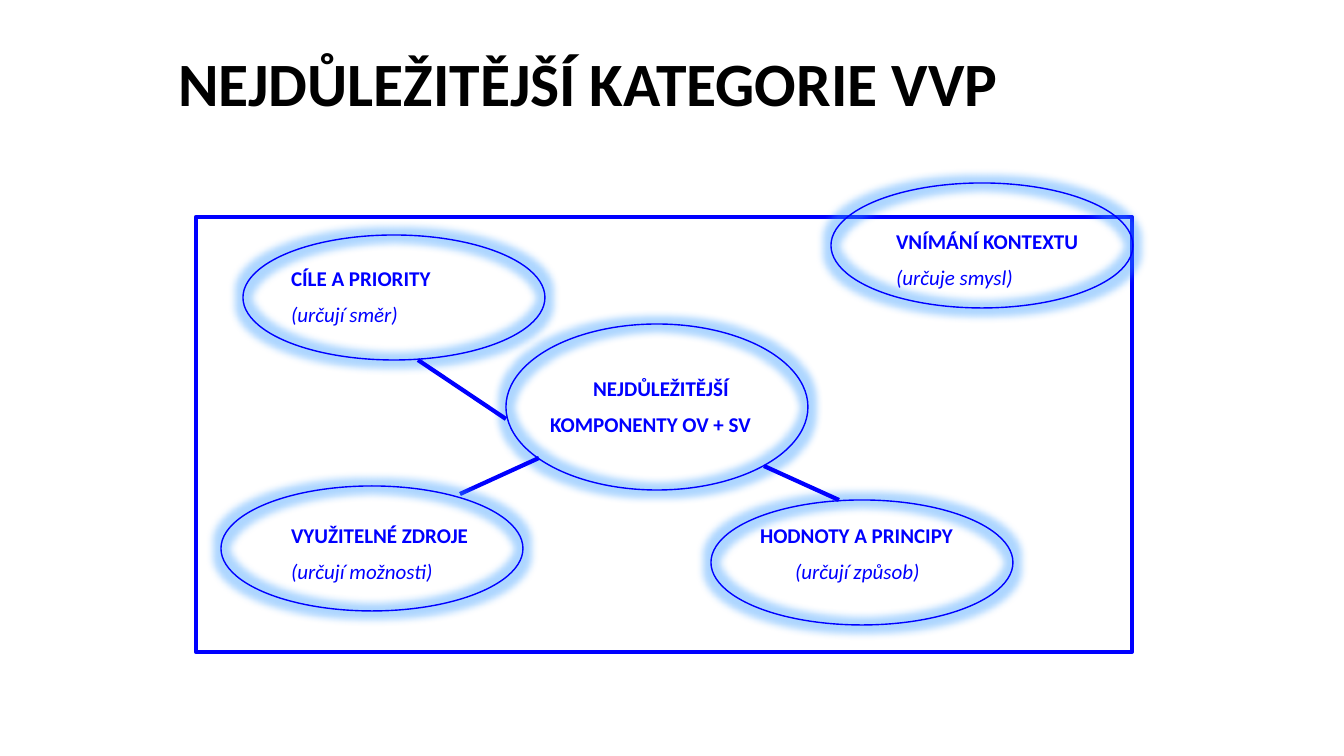
"""Build the slide on the key categories of VVP as a framed diagram of glowing ovals."""
from lxml import etree
from pptx import Presentation
from pptx import util as u
from pptx.dml.color import RGBColor
from pptx.enum import shapes, text
from pptx.oxml.ns import qn

BLUE = RGBColor(0x00, 0x00, 0xFF)
BLACK = RGBColor(0x00, 0x00, 0x00)
GLOW = RGBColor(0x33, 0x99, 0xFF)
FONT = "Calibri"
EMU_PER_PX = 914400 / 100.8
OVAL_INSET = 0.146
OVAL_W, OVAL_H, CENTRE_H = 302, 125, 166
GLOW_RADIUS = 15

TITLE = "NEJDŮLEŽITĚJŠÍ KATEGORIE VVP"
TITLE_BOX = (168, 39, 1008, 95)
FRAME = (196, 217, 936, 435)

# left, top, height, top of text, lines of (text, left, italic)
CENTRE = (506, 324, CENTRE_H, 378,
          [("NEJDŮLEŽITĚJŠÍ", 593, False), ("KOMPONENTY OV + SV", 550, False)])
GOALS = (243, 235, OVAL_H, 268,
         [("CÍLE A PRIORITY", 291, False), ("(určují směr)", 291, True)])
VALUES = (711, 500, OVAL_H, 525,
          [("HODNOTY A PRINCIPY", 760, False), ("(určují způsob)", 795, True)])
CONTEXT = (831, 183, OVAL_H, 231,
           [("VNÍMÁNÍ KONTEXTU", 896, False), ("(určuje smysl)", 896, True)])
RESOURCES = (221, 486, OVAL_H, 525,
             [("VYUŽITELNÉ ZDROJE", 291, False), ("(určují možnosti)", 291, True)])
LINKS = [(460, 494, 539, 458), (506, 419, 418, 360), (764, 466, 839, 500)]


def px(n):
    return u.Emu(round(n * EMU_PER_PX))


def style_run(r, size, color, bold, italic=False):
    r.font.name, r.font.size = FONT, u.Pt(size)
    r.font.color.rgb = color
    r.font.bold, r.font.italic = bold, italic


def add_outline(s, kind, box, width):
    sp = s.shapes.add_shape(kind, *map(px, box))
    sp.shadow.inherit = False
    sp.fill.background()
    sp.line.color.rgb, sp.line.width = BLUE, u.Pt(width)
    return sp


def add_glow(sp):
    effects = sp._element.spPr.find(qn("a:effectLst"))
    glow = etree.SubElement(effects, qn("a:glow"), rad=str(px(GLOW_RADIUS)))
    color = etree.SubElement(glow, qn("a:srgbClr"), val=str(GLOW))
    etree.SubElement(color, qn("a:alpha"), val="40000")


def add_oval(s, left, top, height, text_top, lines):
    sp = add_outline(s, shapes.MSO_SHAPE.OVAL, (left, top, OVAL_W, height), 1)
    add_glow(sp)
    text_left = left + OVAL_INSET * OVAL_W
    tf = sp.text_frame
    tf.word_wrap = True
    tf.vertical_anchor = text.MSO_ANCHOR.TOP
    tf.margin_left = tf.margin_right = tf.margin_bottom = 0
    tf.margin_top = px(text_top - top - OVAL_INSET * height)
    tf.text = "\n".join(line[0] for line in lines)
    for i, (p, (_, x, italic)) in enumerate(zip(tf.paragraphs, lines)):
        p.alignment = text.PP_ALIGN.LEFT
        p.line_spacing = 0.9
        p.space_before = u.Pt(10 if i else 0)
        p._p.get_or_add_pPr().set("marL", str(px(max(0, x - text_left))))
        style_run(p.runs[0], 15, BLUE, not italic, italic)


def add_link(s, *ends):
    link = s.shapes.add_connector(shapes.MSO_CONNECTOR.STRAIGHT, *map(px, ends))
    link.line.color.rgb, link.line.width = BLUE, u.Pt(3)
    etree.SubElement(link._element.spPr, qn("a:effectLst"))


def add_title(s):
    title = s.shapes.title
    title.left, title.top, title.width, title.height = map(px, TITLE_BOX)
    tf = title.text_frame
    tf.text = TITLE
    tf.vertical_anchor = text.MSO_ANCHOR.MIDDLE
    p = tf.paragraphs[0]
    p.alignment, p.line_spacing = text.PP_ALIGN.LEFT, 0.9
    style_run(p.runs[0], 44, BLACK, True)


def main():
    prs = Presentation()
    prs.slide_width, prs.slide_height = px(1344), px(756)
    s = prs.slides.add_slide(prs.slide_layouts[5])
    add_title(s)
    for oval in (CENTRE, GOALS, VALUES):
        add_oval(s, *oval)
    add_outline(s, shapes.MSO_SHAPE.RECTANGLE, FRAME, 3)
    add_oval(s, *CONTEXT)
    for ends in LINKS:
        add_link(s, *ends)
    add_oval(s, *RESOURCES)
    prs.save("out.pptx")


if __name__ == "__main__":
    main()
